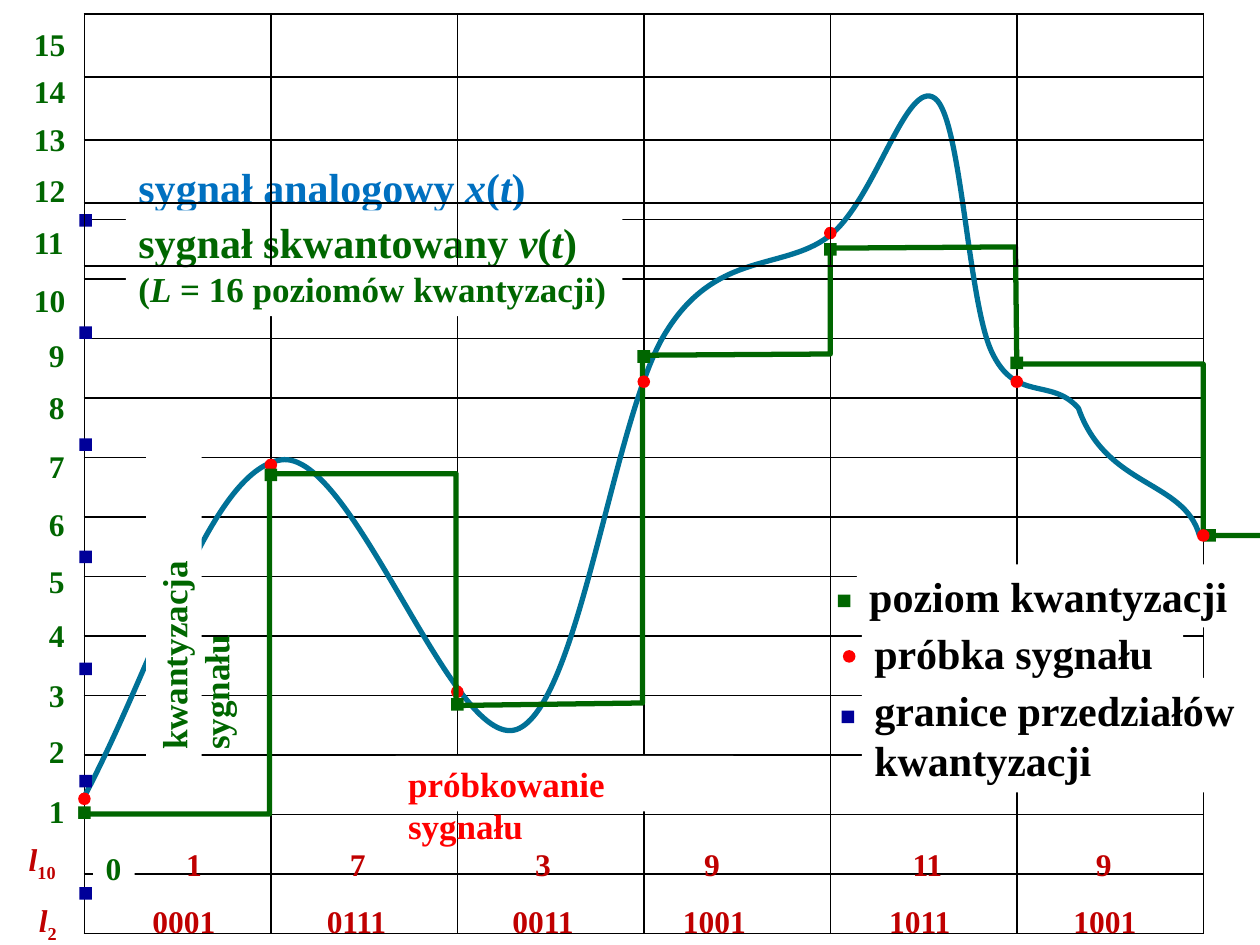
from dataclasses import dataclass

from lxml.etree import SubElement
from pptx import Presentation
from pptx.dml.color import RGBColor
from pptx.enum.shapes import MSO_SHAPE
from pptx.enum.text import MSO_ANCHOR, PP_ALIGN
from pptx.oxml.ns import qn
from pptx.util import Inches, Pt


@dataclass(frozen=True)
class Theme:
    font: str = "Times New Roman"
    ink: str = "000000"
    paper: str = "FFFFFF"
    analog: str = "0070C0"
    curve: str = "007197"
    level: str = "006600"
    sample: str = "FF0000"
    border: str = "000099"
    code: str = "C00000"
    large: int = 24
    medium: int = 20
    small: int = 18
    thick: float = 3
    thin: float = 1


THEME = Theme()
SLIDE_W, SLIDE_H = 10, 7.5
GRID_LEFT, COLUMNS, COLUMN_W = 0.67, 6, 1.48
GRIDS = {"lower": (1.74, 12, 5.67), "upper": (0.11, 4, 2)}
MARK = 0.1
LABEL_H = 0.4
LABEL_PADDING, DIGIT_W = 0.21, 0.14

SAMPLE_Y = [6.34, 3.69, 5.49, 3.03, 1.85, 3.03, 4.25]
FRONT_SAMPLES = (3, 6)
LEVEL_Y = [6.45, 3.77, 5.59, 2.83, 1.98, 2.88, 4.25]
BORDER_X, BORDER_TOP, BORDER_STEP, BORDER_COUNT = 0.68, 1.75, 0.89, 7

CURVE = [
    (0.66, 6.34),
    (1.24, 5.25), (1.66, 3.74), (2.23, 3.65),
    (2.8, 3.56), (3.59, 5.96), (4.1, 5.79),
    (4.6, 5.61), (4.87, 3.28), (5.29, 2.63),
    (5.7, 1.97), (6.25, 2.16), (6.61, 1.85),
    (6.96, 1.54), (7.2, 0.62), (7.42, 0.78),
    (7.63, 0.93), (7.68, 2.38), (7.87, 2.79),
    (8.06, 3.2), (8.34, 2.99), (8.56, 3.24),
    (8.78, 3.87), (9.4, 3.81), (9.52, 4.25),
]
STEPS = [
    (0.66, 6.46), (2.14, 6.46), (2.14, 3.76), (3.62, 3.76), (3.62, 5.6),
    (5.1, 5.58), (5.1, 2.82), (6.59, 2.81), (6.59, 1.97), (8.06, 1.96),
    (8.07, 2.89), (9.55, 2.89), (9.55, 4.25), (10.24, 4.25),
]

ITALIC = {"italic": True}
MEDIUM = {"size": THEME.medium}
SIGNALS = [
    ((1, 1.23, 3.31, 0.5), THEME.analog,
     [("sygnał analogowy ", {}), ("x", ITALIC), ("(", {}), ("t", ITALIC), (")", {})]),
    ((1, 1.67, 3.94, 0.84), THEME.level,
     [("sygnał skwantowany ", {}), ("v", ITALIC), ("(", {}), ("t", ITALIC), (")", {}),
      ("\n", {}), ("(", MEDIUM), ("L", MEDIUM | ITALIC),
      (" = 16 poziomów kwantyzacji)", MEDIUM)]),
]
PROCESSES = [
    ("próbkowanie sygnału", (3.14, 6, 2.68, 0.44), THEME.sample, 0),
    ("kwantyzacja sygnału", (0.09, 4.54, 2.58, 0.44), THEME.level, 270),
]
LEGEND = [
    (["poziom kwantyzacji"], (6.8, 4.48, 3.18, 0.5),
     MSO_SHAPE.RECTANGLE, THEME.level, (6.7, 4.77)),
    (["próbka sygnału"], (6.84, 4.93, 2.55, 0.5),
     MSO_SHAPE.OVAL, THEME.sample, (6.74, 5.21)),
    (["granice przedziałów", "kwantyzacji"], (6.84, 5.38, 3.15, 0.91),
     MSO_SHAPE.RECTANGLE, THEME.border, (6.73, 5.69)),
]
LEVEL_TOPS = [6.24, 5.76, 5.32, 4.84, 4.41, 3.96, 3.5, 3.03,
              2.62, 2.18, 1.72, 1.31, 0.9, 0.52, 0.15]
LEVEL_RIGHT = 0.62
ZERO_BOX = (0.74, 6.69, 0.33, LABEL_H)
CODES = [
    ("10", 0.35, 0.44, 6.62, 6.66, ["1", "7", "3", "9", "11", "9"],
     [1.54, 2.84, 4.31, 5.65, 7.36, 8.76]),
    ("2", 0.39, 0.36, 7.1, 7.11, ["0001", "0111", "0011", "1001", "1011", "1001"],
     [1.46, 2.83, 4.31, 5.67, 7.3, 8.77]),
]


def rgb(value):
    return RGBColor.from_string(value)


def write(slide, runs, box, color, size=THEME.small, fill=THEME.paper,
          wrap=False, align=PP_ALIGN.LEFT, rotation=0):
    label = slide.shapes.add_textbox(*map(Inches, box))
    label.rotation = rotation
    if fill:
        label.fill.solid()
        label.fill.fore_color.rgb = rgb(fill)
    frame = label.text_frame
    frame.word_wrap = wrap
    frame.vertical_anchor = MSO_ANCHOR.TOP
    paragraph = frame.paragraphs[0]
    paragraph.alignment = align
    for words, style in [(runs, {})] if isinstance(runs, str) else runs:
        if words == "\n":
            paragraph.add_line_break()
            continue
        run = paragraph.add_run()
        run.text = words
        run.font.name = THEME.font
        run.font.bold = True
        run.font.italic = style.get("italic", False)
        run.font.size = Pt(style.get("size", size))
        run.font.color.rgb = rgb(color)
        if "baseline" in style:
            run._r.get_or_add_rPr().set("baseline", style["baseline"])


def mark(slide, kind, x, y, color):
    dot = slide.shapes.add_shape(kind, Inches(x - MARK / 2), Inches(y - MARK / 2),
                                 Inches(MARK), Inches(MARK))
    dot.shadow.inherit = False
    dot.fill.solid()
    dot.fill.fore_color.rgb = rgb(color)
    dot.line.fill.background()


def trace(slide, points, color, curved=False):
    start, *rest = [(Inches(x), Inches(y)) for x, y in points]
    builder = slide.shapes.build_freeform(*start)
    builder.add_line_segments(rest, close=False)
    signal = builder.convert_to_shape()
    signal.shadow.inherit = False
    signal.fill.background()
    signal.line.color.rgb = rgb(color)
    signal.line.width = Pt(THEME.thick)
    if curved:
        outline = signal._element.find(".//" + qn("a:path"))
        segments = outline.findall(qn("a:lnTo"))
        for first in range(0, len(segments), 3):
            bezier = SubElement(outline, qn("a:cubicBezTo"))
            for segment in segments[first:first + 3]:
                bezier.append(segment[0])
                outline.remove(segment)


def draw_grid(slide, top, rows, height):
    grid = slide.shapes.add_table(
        rows, COLUMNS, Inches(GRID_LEFT), Inches(top),
        Inches(COLUMNS * COLUMN_W), Inches(height)).table
    grid.first_row = grid.horz_banding = False
    for cell in grid.iter_cells():
        properties = cell._tc.get_or_add_tcPr()
        for side in ("a:lnL", "a:lnR", "a:lnT", "a:lnB"):
            edge = SubElement(properties, qn(side), w=str(Pt(THEME.thin)))
            SubElement(SubElement(edge, qn("a:solidFill")), qn("a:srgbClr"), val=THEME.ink)
        cell.fill.background()


def draw_samples(slide, front):
    for i, y in enumerate(SAMPLE_Y):
        if (i in FRONT_SAMPLES) == front:
            mark(slide, MSO_SHAPE.OVAL, GRID_LEFT + i * COLUMN_W, y, THEME.sample)


def main():
    deck = Presentation()
    deck.slide_width, deck.slide_height = Inches(SLIDE_W), Inches(SLIDE_H)
    slide = deck.slides.add_slide(deck.slide_layouts[6])

    draw_grid(slide, *GRIDS["lower"])
    trace(slide, CURVE, THEME.curve, curved=True)
    draw_samples(slide, front=False)
    for box, color, runs in SIGNALS:
        write(slide, runs, box, color, THEME.large)
    for i, y in enumerate(LEVEL_Y):
        shift = MARK / 2 if i == COLUMNS else 0
        mark(slide, MSO_SHAPE.RECTANGLE, GRID_LEFT + i * COLUMN_W + shift, y, THEME.level)
    trace(slide, STEPS, THEME.level)
    for words, box, color, rotation in PROCESSES:
        write(slide, words, box, color, THEME.medium, wrap=True, rotation=rotation)
    for lines, box, kind, color, center in LEGEND:
        mark(slide, kind, *center, color)
        runs = [(part, {}) for line in lines for part in ("\n", line)][1:]
        write(slide, runs, box, THEME.ink, THEME.large, wrap=True)
    for i in range(BORDER_COUNT):
        mark(slide, MSO_SHAPE.RECTANGLE, BORDER_X, BORDER_TOP + i * BORDER_STEP, THEME.border)

    write(slide, "0", ZERO_BOX, THEME.level)
    for number, top in enumerate(LEVEL_TOPS, 1):
        width = 0.33 if number < 10 else 0.45
        write(slide, str(number), (LEVEL_RIGHT - width, top, width, LABEL_H), THEME.level)
    for base, base_x, base_w, base_top, top, values, centers in CODES:
        write(slide, [("l", ITALIC), (base, {"baseline": "-25000"})],
              (base_x - base_w / 2, base_top, base_w, LABEL_H), THEME.code, fill=None)
        for value, center in zip(values, centers):
            width = LABEL_PADDING + DIGIT_W * len(value)
            write(slide, value, (center - width / 2, top, width, LABEL_H),
                  THEME.code, fill=None, align=PP_ALIGN.CENTER)
    draw_grid(slide, *GRIDS["upper"])
    draw_samples(slide, front=True)
    deck.save("out.pptx")


if __name__ == "__main__":
    main()
